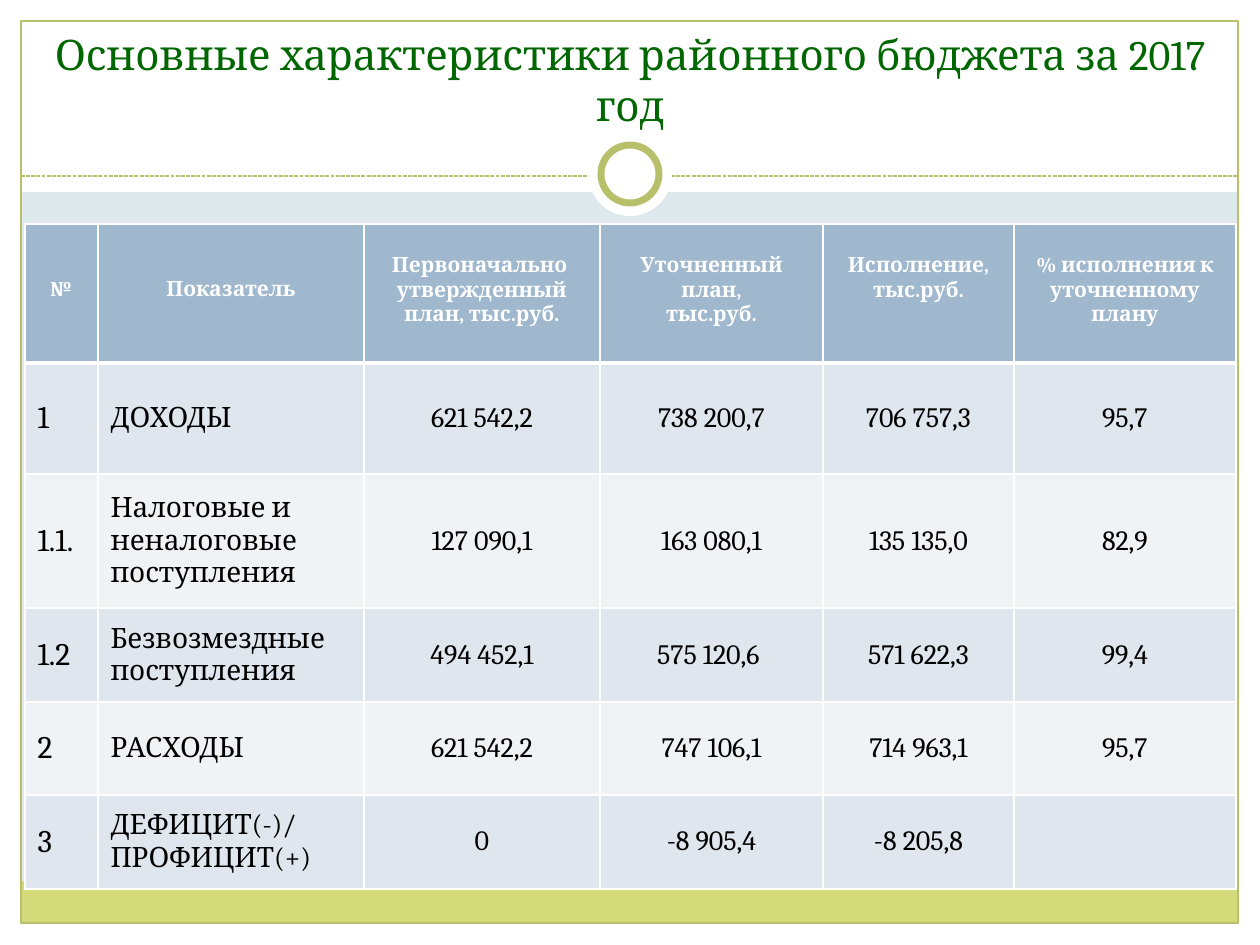
import pptx
import pptx.dml.color
import pptx.enum.dml
import pptx.enum.shapes
import pptx.enum.text
import pptx.oxml
import pptx.oxml.ns
import pptx.util
from lxml import etree

PX = 914400 / 126
FONT = "Cambria"
COLORS = {
    "page": "DDE9EC", "white": "FFFFFF", "olive": "B9C06C", "lime": "D2DA7A",
    "title": "006600", "text": "000000", "header": "9FB8CD",
    "odd_row": "DFE6ED", "even_row": "F0F3F6",
}
SHAPE = pptx.enum.shapes.MSO_SHAPE
ALIGN = pptx.enum.text.PP_ALIGN
ANCHOR = pptx.enum.text.MSO_ANCHOR

TITLE = "Основные характеристики районного бюджета за 2017 год"
HEADERS = [
    ["№"],
    ["Показатель"],
    ["Первоначально ", "утвержденный", "план, тыс.руб."],
    ["Уточненный", "план,", "тыс.руб."],
    ["Исполнение, тыс.руб."],
    ["% исполнения к", "уточненному", "плану"],
]
BUDGET = [
    ["1", "ДОХОДЫ", "621 542,2", "738 200,7", "706 757,3", "95,7"],
    ["1.1.", "Налоговые и неналоговые\nпоступления", "127 090,1", "163 080,1", "135 135,0", "82,9"],
    ["1.2", "Безвозмездные поступления", "494 452,1", "575 120,6 ", "571 622,3", "99,4"],
    ["2", "РАСХОДЫ", "621 542,2", "747 106,1", "714 963,1", "95,7"],
    ["3", "ДЕФИЦИТ(-)/\nПРОФИЦИТ(+)", "0", "-8 905,4", "-8 205,8", ""],
]
COLUMN_WIDTHS = [73, 266, 236, 223, 191, 222]
ROW_HEIGHTS = [139, 111, 134, 94, 93, 94]


def emu(px):
    return pptx.util.Emu(round(px * PX))


def rgb(name):
    return pptx.dml.color.RGBColor.from_string(COLORS[name])


class SlideBuilder:
    def __init__(self, slide):
        self.slide = slide
        slide.background.fill.solid()
        slide.background.fill.fore_color.rgb = rgb("page")

    def shape(self, kind, x, y, width, height, fill=None, line=None, weight=0.75):
        shape = self.slide.shapes.add_shape(kind, emu(x), emu(y), emu(width), emu(height))
        shape.shadow.inherit = False
        if fill:
            shape.fill.solid()
            shape.fill.fore_color.rgb = rgb(fill)
        else:
            shape.fill.background()
        if line:
            shape.line.color.rgb = rgb(line)
            shape.line.width = pptx.util.Pt(weight)
        else:
            shape.line.fill.background()

    def dashed_line(self, x1, y1, x2, y2, color):
        line = self.slide.shapes.add_connector(
            pptx.enum.shapes.MSO_CONNECTOR.STRAIGHT, emu(x1), emu(y1), emu(x2), emu(y2))
        line.line.color.rgb = rgb(color)
        line.line.width = pptx.util.Pt(0.75)
        line.line.dash_style = pptx.enum.dml.MSO_LINE.SQUARE_DOT
        etree.SubElement(line._element.spPr, pptx.oxml.ns.qn("a:effectLst"))

    def paragraphs(self, frame, lines, size, color, align, bold=False):
        for index, text in enumerate(lines):
            paragraph = frame.add_paragraph() if index else frame.paragraphs[0]
            paragraph.alignment = align
            run = paragraph.add_run()
            run.text = text
            run.font.name = FONT
            run.font.size = pptx.util.Pt(size)
            run.font.bold = bold
            run.font.color.rgb = rgb(color)

    def title(self, text, x, y, width, height):
        """Place the title in front of everything drawn so far."""
        title = self.slide.shapes.title
        title.left, title.top = emu(x), emu(y)
        title.width, title.height = emu(width), emu(height)
        title.text_frame.word_wrap = True
        title.text_frame.vertical_anchor = ANCHOR.BOTTOM
        self.paragraphs(title.text_frame, [text], 24, "title", ALIGN.CENTER)
        self.slide.shapes._spTree.append(title._element)

    def table(self, x, y, widths, heights):
        table = self.slide.shapes.add_table(
            len(heights), len(widths), emu(x), emu(y), emu(sum(widths)), emu(sum(heights))).table
        for column, width in zip(table.columns, widths):
            column.width = emu(width)
        for row, height in zip(table.rows, heights):
            row.height = emu(height)
        return table

    def cell(self, cell, fill, top=1, bottom=1):
        """Fill a cell and give it white borders, in points."""
        cell.fill.solid()
        cell.fill.fore_color.rgb = rgb(fill)
        borders = {"lnL": 1, "lnR": 1, "lnT": top, "lnB": bottom}
        for index, (side, weight) in enumerate(borders.items()):
            border = pptx.oxml.parse_xml(
                f'<a:{side} {pptx.oxml.ns.nsdecls("a")} w="{pptx.util.Pt(weight)}">'
                f'<a:solidFill><a:srgbClr val="{COLORS["white"]}"/></a:solidFill></a:{side}>')
            cell._tc.get_or_add_tcPr().insert(index, border)

    def header_cell(self, cell, lines, offset):
        self.cell(cell, "header", bottom=3)
        cell.margin_top = emu(offset)
        self.paragraphs(cell.text_frame, lines, 12, "white", ALIGN.CENTER, bold=True)

    def body_cell(self, cell, text, row, column):
        self.cell(cell, "odd_row" if row % 2 else "even_row", top=3 if row == 1 else 1)
        cell.vertical_anchor = ANCHOR.MIDDLE
        if text:
            self.paragraphs(cell.text_frame, text.split("\n"), 16 if column else 18, "text",
                            ALIGN.LEFT if column < 2 else ALIGN.CENTER)


def main():
    deck = pptx.Presentation()
    deck.slide_width, deck.slide_height = emu(1260), emu(945)
    builder = SlideBuilder(deck.slides.add_slide(deck.slide_layouts[5]))

    for margin in [(0, 924, 1260, 21), (0, 0, 1260, 192), (0, 0, 21, 945), (1239, 0, 21, 945)]:
        builder.shape(SHAPE.RECTANGLE, *margin, fill="white")
    builder.shape(SHAPE.RECTANGLE, 21, 881, 1217, 43, fill="lime")
    builder.shape(SHAPE.RECTANGLE, 21, 21, 1217, 902, line="olive")
    builder.dashed_line(21, 176, 1239, 176, "olive")
    builder.shape(SHAPE.OVAL, 588, 132, 84, 84, fill="white")
    builder.shape(SHAPE.OVAL, 601, 145, 58, 58, fill="white", line="olive", weight=4)
    builder.title(TITLE, 42, 31, 1176, 105)

    table = builder.table(25, 224, COLUMN_WIDTHS, ROW_HEIGHTS)
    for column, lines in enumerate(HEADERS):
        builder.header_cell(table.cell(0, column), lines, 54 if column < 2 else 30)
    for row, values in enumerate(BUDGET, start=1):
        for column, text in enumerate(values):
            builder.body_cell(table.cell(row, column), text, row, column)

    deck.save("out.pptx")


if __name__ == "__main__":
    main()
